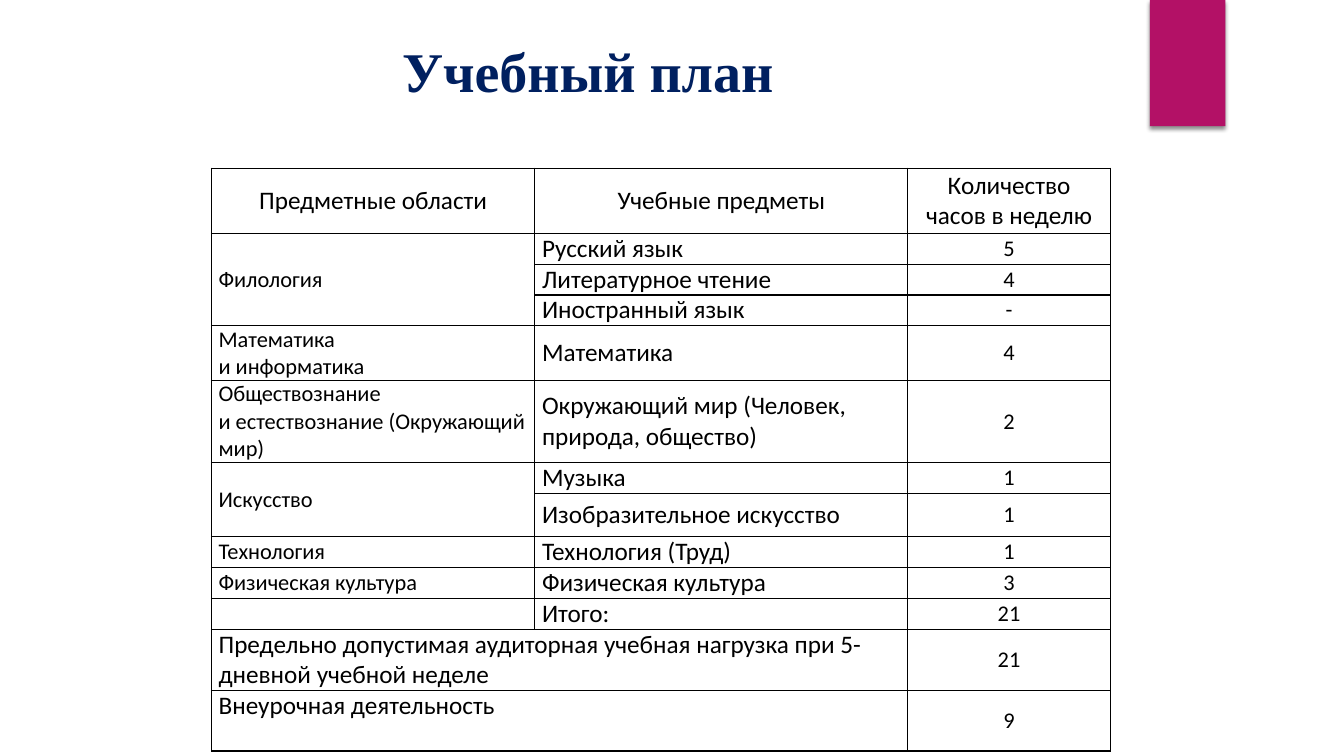
from dataclasses import dataclass

from lxml.etree import SubElement
from pptx import Presentation
from pptx.dml.color import RGBColor
from pptx.enum.shapes import MSO_SHAPE as Shape
from pptx.enum.text import MSO_ANCHOR as Anchor, PP_ALIGN as Align
from pptx.oxml import parse_xml
from pptx.oxml.ns import nsdecls, qn
from pptx.util import Cm, Pt


@dataclass(frozen=True)
class Theme:
    accent: str = "B31166"
    title: str = "002060"
    ink: str = "000000"
    title_font: str = "Times New Roman"
    body_font: str = "Calibri"
    title_size: int = 40
    body_size: int = 18
    small_size: int = 16


@dataclass(frozen=True)
class PlanRow:
    """One table row; an area of None continues the area above,
    a subject of None lets the area span both text columns."""
    area: str | None
    subject: str | None
    hours: str
    height: float = 0.76


THEME = Theme()
COLUMN_WIDTHS = (8.15, 9.4, 5.1)
PLAN = (
    PlanRow("Предметные области", "Учебные предметы", "Количество часов в неделю", 1.64),
    PlanRow("Филология", "Русский язык", "5"),
    PlanRow(None, "Литературное чтение", "4"),
    PlanRow(None, "Иностранный язык", "-"),
    PlanRow("Математика \nи информатика", "Математика", "4", 1.35),
    PlanRow("Обществознание \nи естествознание (Окружающий мир)",
            "Окружающий мир (Человек, природа, общество)", "2", 2.05),
    PlanRow("Искусство", "Музыка", "1"),
    PlanRow(None, "Изобразительное искусство", "1", 1.09),
    PlanRow("Технология", "Технология (Труд)", "1"),
    PlanRow("Физическая культура", "Физическая культура", "3"),
    PlanRow("", "Итого:", "21"),
    PlanRow("Предельно допустимая аудиторная учебная нагрузка при 5-дневной учебной неделе",
            None, "21", 1.54),
    PlanRow("Внеурочная деятельность", None, "9", 1.52),
)


def add_text(paragraph, text: str, size: int, font: str, color: str, bold: bool = False) -> None:
    for index, line in enumerate(text.split("\n")):
        if index:
            paragraph.add_line_break()
        run = paragraph.add_run()
        run.text = line
        run.font.name = font
        run.font.size = Pt(size)
        run.font.bold = bold
        run.font.color.rgb = RGBColor.from_string(color)


def line_element(tag: str, points: float):
    return parse_xml(
        f'<a:{tag} {nsdecls("a")} w="{Pt(points)}"><a:solidFill>'
        f'<a:srgbClr val="{THEME.ink}"/></a:solidFill></a:{tag}>')


def format_cell(cell) -> None:
    cell.margin_left = cell.margin_right = Cm(0.18)
    cell.margin_top = cell.margin_bottom = 0
    cell.vertical_anchor = Anchor.MIDDLE
    cell.fill.background()
    properties = cell._tc.get_or_add_tcPr()
    for index, side in enumerate(("lnL", "lnR", "lnT", "lnB")):
        properties.insert(index, line_element(side, 1))


def fill_cell(cell, text: str, size: int, align: Align) -> None:
    paragraph = cell.text_frame.paragraphs[0]
    paragraph.alignment = align
    if text:
        add_text(paragraph, text, size, THEME.body_font, THEME.ink)


def add_ribbon(slide) -> None:
    ribbon = slide.shapes.add_shape(Shape.RECTANGLE, Cm(28.98), 0, Cm(1.9), Cm(3.18))
    ribbon.fill.solid()
    ribbon.fill.fore_color.rgb = RGBColor.from_string(THEME.accent)
    ribbon.line.fill.background()
    ribbon.shadow.inherit = False
    effects = ribbon._element.spPr.find(qn("a:effectLst"))
    shadow = SubElement(effects, qn("a:outerShdw"), blurRad=str(Pt(3)),
                        dist=str(Pt(2)), dir="5400000", rotWithShape="0")
    color = SubElement(shadow, qn("a:srgbClr"), val=THEME.ink)
    SubElement(color, qn("a:alpha"), val="45000")


def add_title(slide) -> None:
    title = slide.shapes.title
    title.left, title.top, title.width, title.height = Cm(9.88), Cm(0.79), Cm(11.61), Cm(1.96)
    title.text_frame.vertical_anchor = Anchor.MIDDLE
    paragraph = title.text_frame.paragraphs[0]
    paragraph.alignment = Align.LEFT
    add_text(paragraph, "Учебный план", THEME.title_size, THEME.title_font, THEME.title, True)
    paragraph.runs[0].font._element.insert(0, line_element("ln", 0.75))


def add_plan(slide) -> None:
    frame = slide.shapes.add_table(
        len(PLAN), len(COLUMN_WIDTHS), Cm(5.33), Cm(4.24),
        Cm(sum(COLUMN_WIDTHS)), Cm(sum(row.height for row in PLAN)))
    table = frame.table
    table.first_row = table.horz_banding = False
    for column, width in zip(table.columns, COLUMN_WIDTHS):
        column.width = Cm(width)
    for cell in table.iter_cells():
        format_cell(cell)

    # Text
    for index, row in enumerate(PLAN):
        table.rows[index].height = Cm(row.height)
        header = index == 0
        area_size = THEME.body_size if header or row.subject is None else THEME.small_size
        hours_size = THEME.body_size if header else THEME.small_size
        text_align = Align.CENTER if header else Align.LEFT
        area, subject, hours = (table.cell(index, column) for column in range(3))
        fill_cell(area, row.area or "", area_size, text_align)
        fill_cell(subject, row.subject or "", THEME.body_size, text_align)
        fill_cell(hours, row.hours, hours_size, Align.CENTER)

    # Merged cells
    for index, row in enumerate(PLAN):
        if row.subject is None:
            table.cell(index, 0).merge(table.cell(index, 1))
        last = index
        while last + 1 < len(PLAN) and PLAN[last + 1].area is None:
            last += 1
        if row.area is not None and last > index:
            table.cell(index, 0).merge(table.cell(last, 0))
    table.cell(len(PLAN) - 1, 0).vertical_anchor = Anchor.TOP


def main() -> None:
    presentation = Presentation()
    presentation.slide_width, presentation.slide_height = Cm(33.87), Cm(19.05)
    slide = presentation.slides.add_slide(presentation.slide_layouts[5])
    add_ribbon(slide)
    add_title(slide)
    add_plan(slide)
    presentation.save("out.pptx")


if __name__ == "__main__":
    main()
